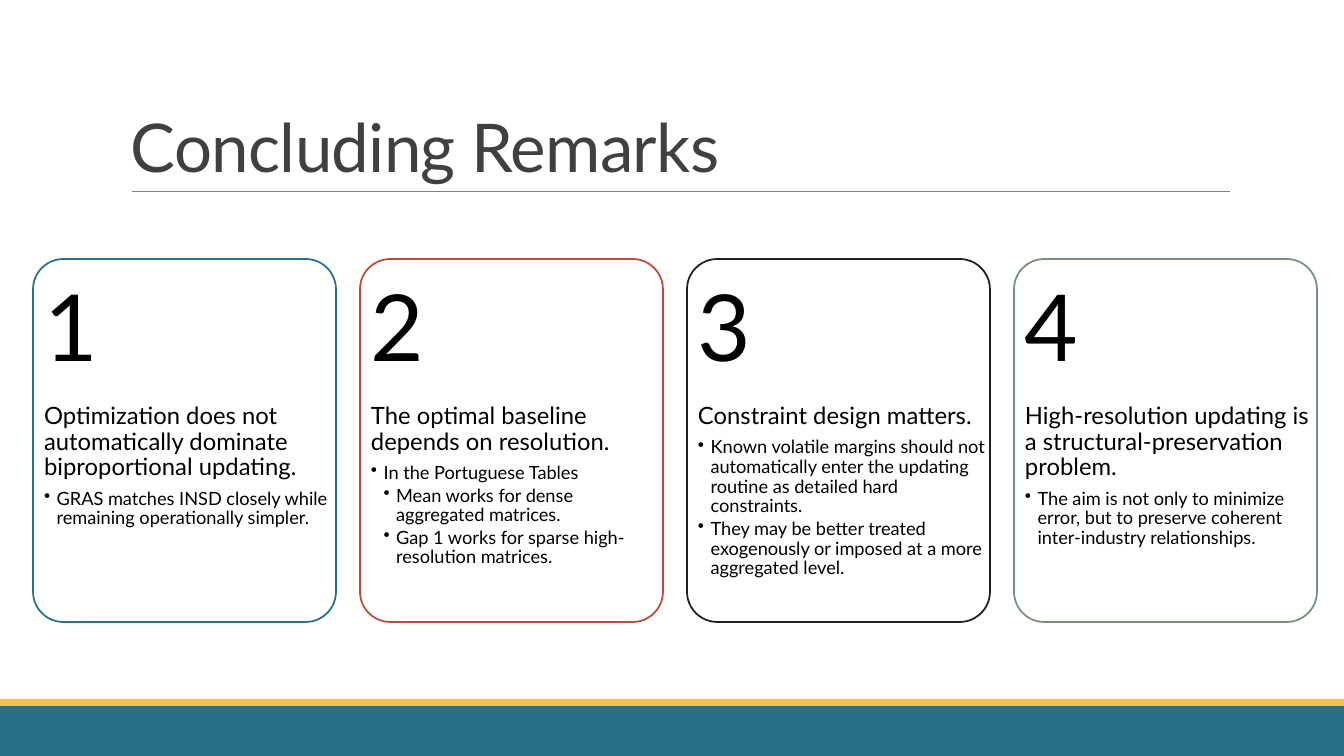
from pptx import Presentation
from pptx.dml.color import RGBColor as RGB
from pptx.enum.shapes import MSO_CONNECTOR as Conn, MSO_SHAPE as Kind
from pptx.enum.text import MSO_ANCHOR as Anchor
from pptx.oxml.ns import qn
from pptx.util import Emu, Pt
from lxml.etree import SubElement as Sub

WHITE = RGB(0xFF, 0xFF, 0xFF)
BLACK = RGB(0, 0, 0)
GRAY = RGB(0x40, 0x40, 0x40)
RULE = RGB(0x80, 0x80, 0x80)
TEAL = RGB(0x28, 0x70, 0x88)
GOLD = RGB(0xF4, 0xBF, 0x57)
RED = RGB(0xBE, 0x4B, 0x37)
INK = RGB(0x1E, 0x1E, 0x23)
SAGE = RGB(0x76, 0x91, 0x78)

WIDE, HIGH = 1344, 756
LEFT, TOP, PITCH = 33, 259, 327
CARD_W, HEAD_H, BODY_H = 303, 145, 218
INDENT = 12.6

# Each card: line colour, heading, then (level, text) bullets
CARDS = [
    (TEAL, "Optimization does not automatically dominate biproportional updating.",
     [(1, "GRAS matches INSD closely while remaining operationally simpler.")]),
    (RED, "The optimal baseline depends on resolution.",
     [(1, "In the Portuguese Tables"),
      (2, "Mean works for dense aggregated matrices."),
      (2, "Gap 1 works for sparse high-resolution matrices.")]),
    (INK, "Constraint design matters.",
     [(1, "Known volatile margins should not automatically enter the updating "
          "routine as detailed hard constraints."),
      (1, "They may be better treated exogenously or imposed at a more "
          "aggregated level.")]),
    (SAGE, "High-resolution updating is a structural-preservation problem.",
     [(1, "The aim is not only to minimize error, but to preserve coherent "
          "inter-industry relationships.")]),
]


def px(n):
    return Emu(round(n * 914400 / 100.8))


def write(para, text, size, color=BLACK, font="Lato", lead=0.9, after=0,
          level=0, track=0):
    """Fill a paragraph; a level above 0 makes it a bullet, track is in 1/100 pt."""
    para.line_spacing = lead
    para.space_after = Pt(after)
    if level:
        para.level = level
        props = para._p.get_or_add_pPr()
        props.set("marL", str(px(INDENT * level)))
        props.set("indent", str(-px(INDENT)))
        Sub(props, qn("a:buChar")).set("char", "•")
    run = para.add_run()
    run.text = text
    run.font.size = Pt(size)
    run.font.name = font
    run.font.color.rgb = color
    if track:
        run._r.get_or_add_rPr().set("spc", str(track))


class Deck:
    def __init__(self):
        self.prs = Presentation()
        self.prs.slide_width, self.prs.slide_height = px(WIDE), px(HIGH)
        self.slide = self.prs.slides.add_slide(self.prs.slide_layouts[6])
        self.shapes = self.slide.shapes

    def shape(self, kind, x, y, w, h, fill, line=None, alpha=None):
        item = self.shapes.add_shape(kind, px(x), px(y), px(w), px(h))
        item.shadow.inherit = False
        item.fill.solid()
        item.fill.fore_color.rgb = fill
        if alpha:
            tint = item._element.spPr.find(qn("a:solidFill"))[0]
            Sub(tint, qn("a:alpha")).set("val", str(alpha * 1000))
        if line is None:
            item.line.fill.background()
        else:
            item.line.color.rgb = line
            item.line.width = Pt(1.25)
        return item

    def rule(self, x, y, end):
        line = self.shapes.add_connector(Conn.STRAIGHT, px(x), px(y), px(end), px(y))
        line.line.color.rgb = RULE
        line.line.width = Pt(0.5)
        Sub(line._element.spPr, qn("a:effectLst"))

    def text(self, x, y, w, h, pad, anchor=Anchor.TOP):
        """Add an empty text box; pad is left, top, right, bottom."""
        frame = self.shapes.add_textbox(px(x), px(y), px(w), px(h)).text_frame
        frame.word_wrap = True
        frame.vertical_anchor = anchor
        (frame.margin_left, frame.margin_top,
         frame.margin_right, frame.margin_bottom) = map(px, pad)
        return frame

    def card(self, num, line, head, points):
        x = LEFT + PITCH * (num - 1)
        box = self.shape(Kind.ROUNDED_RECTANGLE, x, TOP, CARD_W, HEAD_H + BODY_H,
                         WHITE, line, alpha=90)
        box.adjustments[0] = 0.1
        body = self.text(x, TOP + HEAD_H, CARD_W, BODY_H, (11, 0, 5, 36))
        write(body.paragraphs[0], head, 17, after=6)
        for level, point in points:
            write(body.add_paragraph(), point, 13, after=2, level=level)
        top = self.text(x, TOP, CARD_W, HEAD_H, (11, 18, 5, 18), Anchor.MIDDLE)
        write(top.paragraphs[0], str(num), 66)


def main():
    deck = Deck()
    deck.shape(Kind.RECTANGLE, 0, 706, WIDE, 50, TEAL)
    deck.shape(Kind.RECTANGLE, 0, 699, WIDE, 7, GOLD)
    deck.rule(132, 191, 1230)
    title = deck.text(121, 31, 1109, 160, (10, 5, 10, 5), Anchor.BOTTOM)
    write(title.paragraphs[0], "Concluding Remarks", 48, GRAY, lead=0.85, track=-50)
    for num, card in enumerate(CARDS, 1):
        deck.card(num, *card)
    deck.prs.save("out.pptx")


if __name__ == "__main__":
    main()
